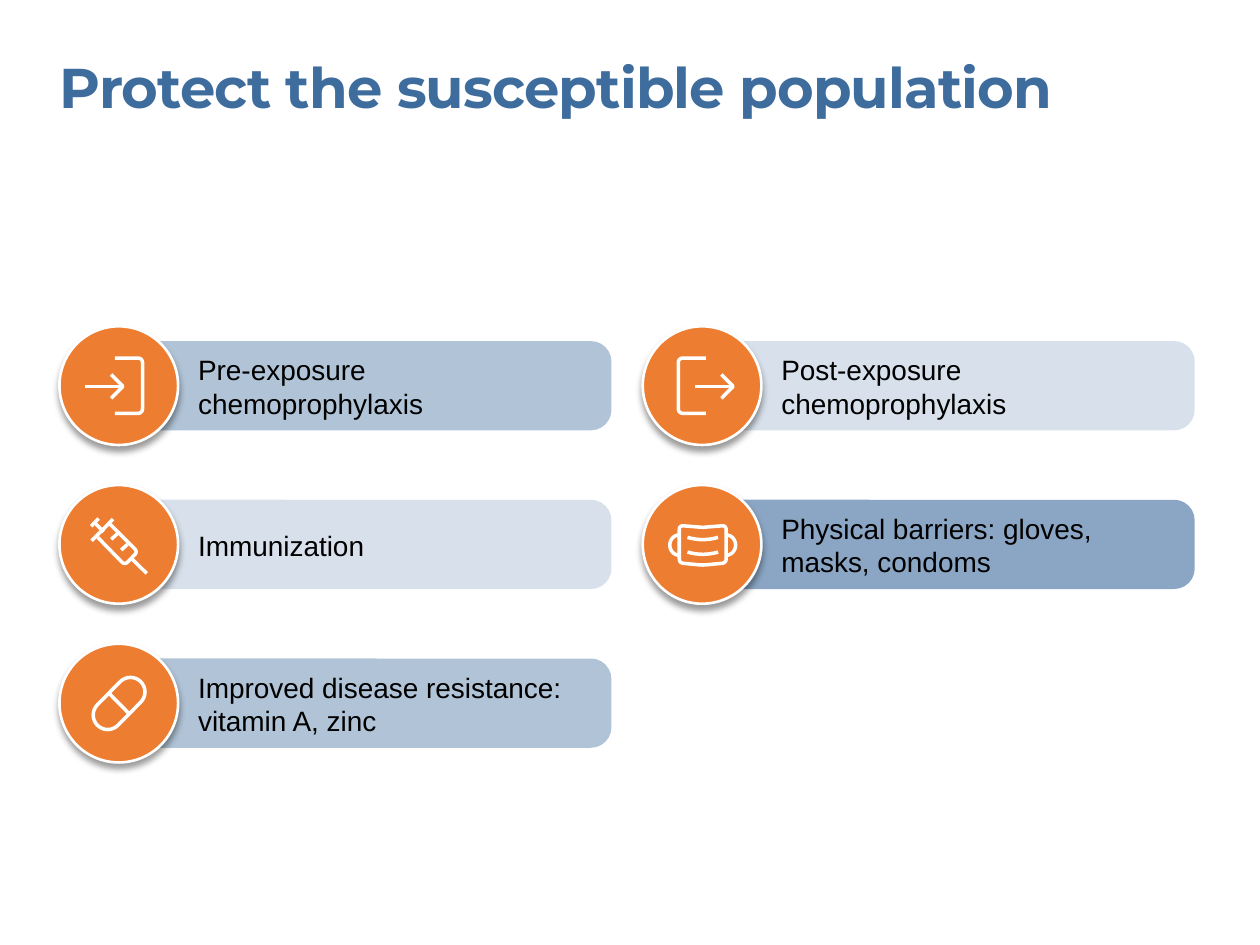
import math

import lxml.etree
import pptx
import pptx.dml.color
import pptx.enum.shapes
import pptx.enum.text
import pptx.oxml
import pptx.oxml.ns
import pptx.util

Pt = pptx.util.Pt
RGBColor = pptx.dml.color.RGBColor
SHAPES = pptx.enum.shapes.MSO_SHAPE
qn = pptx.oxml.ns.qn

BLUE = RGBColor(0x3D, 0x6C, 0x9D)
ORANGE = RGBColor(0xED, 0x7D, 0x31)
WHITE = RGBColor(0xFF, 0xFF, 0xFF)
BLACK = RGBColor(0x00, 0x00, 0x00)

LEFT, TOP = 34, 186.5
COLUMN_STEP, ROW_STEP = 333.3, 90.7
CIRCLE = 67.8
BAR_OFFSET, BAR_WIDTH, BAR_HEIGHT = 33.9, 281.5, 51
TEXT_OFFSET, LINE_HEIGHT = 79.2, 19.4

SHADOW = (
    '<a:effectLst xmlns:a="http://schemas.openxmlformats.org/drawingml/2006/main">'
    '<a:outerShdw blurRad="50800" dist="38100" dir="5400000" algn="t" rotWithShape="0">'
    '<a:srgbClr val="000000"><a:alpha val="40000"/></a:srgbClr>'
    '</a:outerShdw></a:effectLst>'
)


def arc(cx, cy, rx, ry, start, end, steps=16):
    """Points along an elliptical arc, angles in degrees, clockwise."""
    angles = [math.radians(start + (end - start) * i / steps) for i in range(steps + 1)]
    return [(cx + rx * math.cos(a), cy + ry * math.sin(a)) for a in angles]


def rounded(points, radius, steps=8):
    """The polyline with each inner corner turned into a quadratic curve."""
    curve = [points[0]]
    for before, corner, after in zip(points, points[1:], points[2:]):
        (ax, ay), (bx, by) = [
            tuple(c + (e - c) * radius / math.dist(corner, end) for c, e in zip(corner, end))
            for end in (before, after)
        ]
        for i in range(steps + 1):
            t = i / steps
            u = 1 - t
            curve.append((u * u * ax + 2 * u * t * corner[0] + t * t * bx,
                          u * u * ay + 2 * u * t * corner[1] + t * t * by))
    return curve + [points[-1]]


def door(side, shift):
    """A bracket open on one side (side is 1 or -1) and a right arrow."""
    bracket = [(-2.2 * side, -15.8), (13.6 * side, -15.8), (13.6 * side, 15.8), (-2.2 * side, 15.8)]
    shaft = [(shift - 19.4, 0.4), (shift + 2.4, 0.4)]
    head = [(shift - 4.3, -6.4), (shift + 2.4, 0.4), (shift - 4.3, 7.2)]
    return [rounded(bracket, 3), shaft, head]


def syringe():
    barrel = [(-12, -4), (3.4, 11.8), (10.8, 4.2), (-5, -11.5)]
    return [
        rounded(barrel, 2.5),
        [(-15.5, -2), (-3.3, -14.4)],
        [(-15.8, -10.4), (-11.5, -14.8)],
        [(-13.7, -12.2), (-8.6, -7.2)],
        [(7.2, 8), (16, 16.6)],
        [(5, 0), (1.4, 3.2)],
        [(-0.7, -6.1), (-4.3, -2.9)],
    ]


def mask():
    body = [(0.4, -9.7), (13.8, -10.8), (13.8, 10.6), (0.4, 11.9),
            (-13, 10.6), (-13, -10.8), (0.4, -9.7)]
    folds = [rounded([(-8.3, y), (0.4, y + 2.4), (9.2, y)], 8.5) for y in (-4, 4.4)]
    ears = [arc(-13, 0.4, 5.4, 5.8, 90, 270), arc(13.8, 0.4, 5.4, 5.8, -90, 90)]
    return [rounded(body, 2.5)] + folds + ears


def capsule():
    outline = arc(6.7, -6.4, 8.3, 8.3, -135, 45) + arc(-6.3, 6.8, 8.3, 8.3, 45, 225)
    return [outline + outline[:1], [(-5.4, -5.5), (5.8, 5.9)]]


# column, row, text, lines, text width, bar opacity in percent, icon
ITEMS = [
    (0, 0, "Pre-exposure chemoprophylaxis", 2, 216.7, 40, door(1, 0)),
    (1, 0, "Post-exposure chemoprophylaxis", 2, 223.2, 20, door(-1, 15.4)),
    (0, 1, "Immunization", 1, 222.5, 20, syringe()),
    (1, 1, "Physical barriers: gloves, masks, condoms", 2, 204.5, 60, mask()),
    (0, 2, "Improved disease resistance: vitamin A, zinc", 2, 216.7, 40, capsule()),
]


def add_text(slide, x, y, w, h, text, font, size, color, bold=False):
    box = slide.shapes.add_textbox(Pt(x), Pt(y), Pt(w), Pt(h))
    tf = box.text_frame
    tf.margin_left = tf.margin_top = tf.margin_right = tf.margin_bottom = 0
    tf.word_wrap = True
    tf.auto_size = pptx.enum.text.MSO_AUTO_SIZE.SHAPE_TO_FIT_TEXT
    p = tf.paragraphs[0]
    r = p.add_run()
    r.text = text
    p.font.name, p.font.size, p.font.bold = font, Pt(size), bold
    p.font.color.rgb = color
    return r


def add_bar(slide, x, middle, opacity):
    s = slide.shapes.add_shape(SHAPES.ROUNDED_RECTANGLE, Pt(x), Pt(middle - BAR_HEIGHT / 2),
                               Pt(BAR_WIDTH), Pt(BAR_HEIGHT))
    s.adjustments[0] = 0.23
    s.shadow.inherit = False
    s.fill.solid()
    s.fill.fore_color.rgb = BLUE
    s.line.fill.background()
    color = s.fill._xPr.find(qn("a:solidFill")).find(qn("a:srgbClr"))
    lxml.etree.SubElement(color, qn("a:alpha")).set("val", str(opacity * 1000))


def add_circle(slide, x, y):
    s = slide.shapes.add_shape(SHAPES.OVAL, Pt(x), Pt(y), Pt(CIRCLE), Pt(CIRCLE))
    s.fill.solid()
    s.fill.fore_color.rgb = ORANGE
    s.line.color.rgb = WHITE
    s.line.width = Pt(1.5)
    s._element.spPr.append(pptx.oxml.parse_xml(SHADOW))


def add_icon(slide, cx, cy, strokes):
    """Draw strokes, given relative to the centre, as one outline."""
    strokes = [[(Pt(cx + x), Pt(cy + y)) for x, y in stroke] for stroke in strokes]
    builder = slide.shapes.build_freeform(*strokes[0][0])
    for i, stroke in enumerate(strokes):
        if i:
            builder.move_to(*stroke[0])
        builder.add_line_segments(stroke[1:], close=False)
    s = builder.convert_to_shape()
    s.shadow.inherit = False
    s.fill.background()
    s.line.color.rgb = WHITE
    s.line.width = Pt(2)


def main():
    prs = pptx.Presentation()
    prs.slide_width, prs.slide_height = Pt(720), Pt(540)
    slide = prs.slides.add_slide(prs.slide_layouts[6])

    title = add_text(slide, LEFT, 30.2, 615.6, 39, "Protect the susceptible population",
                     "Montserrat", 32, BLUE, bold=True)
    title.font._element.set("spc", "-50")

    cells = [(LEFT + column * COLUMN_STEP, TOP + row * ROW_STEP, *rest)
             for column, row, *rest in ITEMS]
    radius = CIRCLE / 2
    for x, y, _, _, _, opacity, _ in cells:
        add_bar(slide, x + BAR_OFFSET, y + radius, opacity)
    for x, y, text, lines, width, _, _ in cells:
        height = lines * LINE_HEIGHT
        add_text(slide, x + TEXT_OFFSET, y + radius + 0.5 - height / 2, width, height,
                 text, "Arial", 16, BLACK)
        add_circle(slide, x, y)
    for x, y, *_, icon in cells:
        add_icon(slide, x + radius, y + radius, icon)

    prs.save("out.pptx")


if __name__ == "__main__":
    main()
